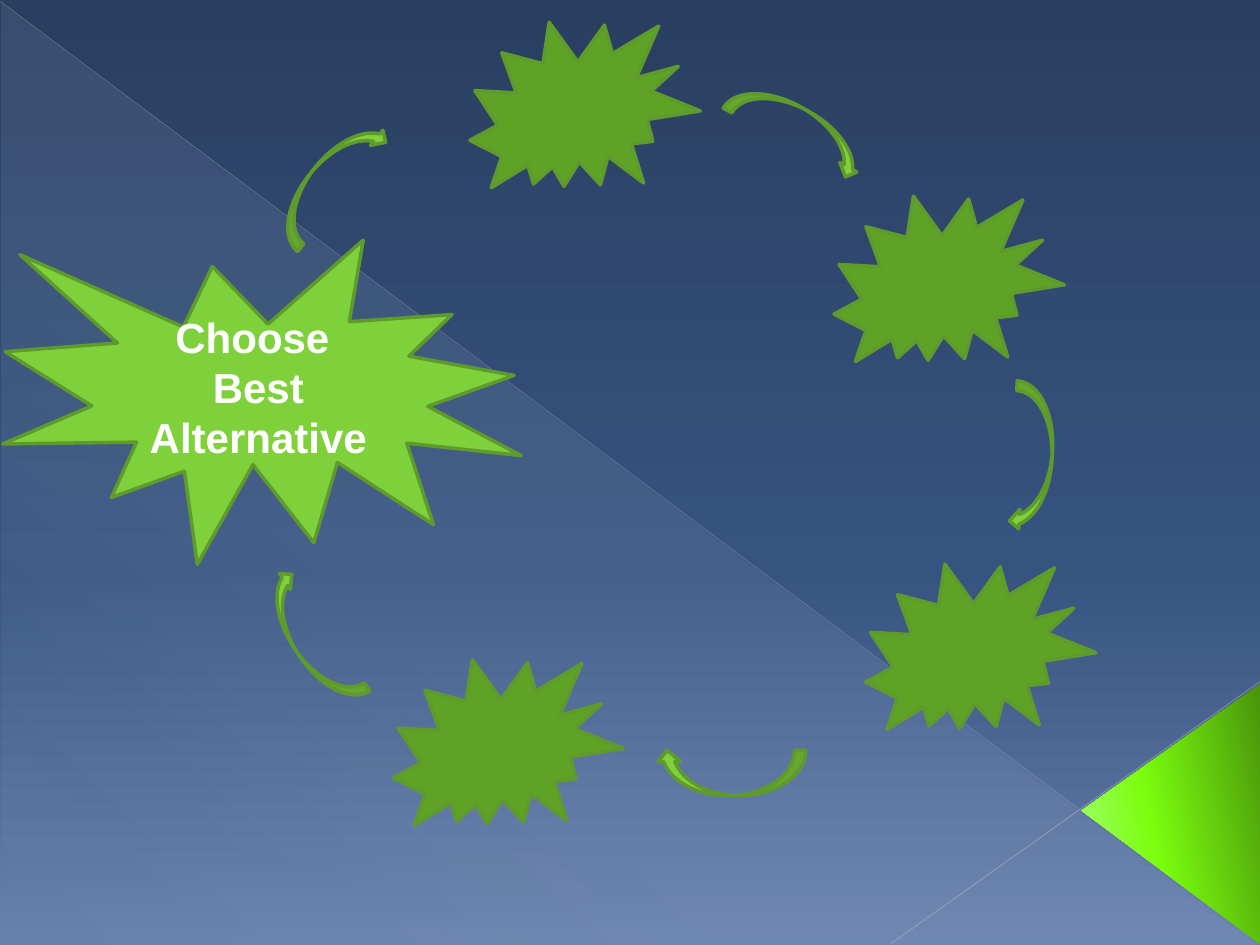
from dataclasses import dataclass

from lxml import etree
from pptx import Presentation
from pptx.dml.color import RGBColor
from pptx.enum.shapes import MSO_CONNECTOR, MSO_SHAPE as Preset
from pptx.enum.text import MSO_AUTO_SIZE as AutoSize, PP_ALIGN as Align
from pptx.oxml.ns import qn
from pptx.util import Inches, Pt


@dataclass(frozen=True)
class Theme:
    lime: str = "7FD13B"
    leaf: str = "5FA326"
    outline: str = "5E9B2C"
    white: str = "FFFFFF"
    font: str = "Arial"
    title_size: int = 24
    outline_width: int = 2
    # Gradient stops: position %, colour, opacity %
    sky: tuple = ((0, "293F60", 100), (60, "375380", 100), (100, "667FAC", 100))
    haze: tuple = ((0, "D6ECFF", 10), (70, "D6ECFF", 8), (100, "D6ECFF", 1))
    glow: tuple = ((0, "49940B", 100), (60, "7BFE0E", 100), (100, "A8FF7D", 100))


theme = Theme()


def paint_gradient(owner, fill, stops, angle):
    """Fill owner with a linear gradient; the angle runs clockwise in degrees."""
    fill.gradient()
    gradient = owner.element.find(".//" + qn("a:gradFill"))
    for child in list(gradient):
        gradient.remove(child)
    gradient.set("rotWithShape", "1")
    stop_list = etree.SubElement(gradient, qn("a:gsLst"))
    for position, color, opacity in stops:
        stop = etree.SubElement(stop_list, qn("a:gs"), pos=str(position * 1000))
        rgb = etree.SubElement(stop, qn("a:srgbClr"), val=color)
        etree.SubElement(rgb, qn("a:alpha"), val=str(opacity * 1000))
    etree.SubElement(gradient, qn("a:lin"), ang=str(angle * 60000), scaled="0")


def add_text(slide, lines, box, *, size, color, font, bold=False, align=Align.CENTER):
    frame = slide.shapes.add_textbox(*map(Inches, box)).text_frame
    frame.word_wrap = False
    frame.auto_size = AutoSize.SHAPE_TO_FIT_TEXT
    for index, line in enumerate(lines):
        paragraph = frame.add_paragraph() if index else frame.paragraphs[0]
        paragraph.alignment = align
        run = paragraph.add_run()
        run.text = line
        run.font.size = Pt(size)
        run.font.bold = bold
        run.font.name = font
        run.font.color.rgb = RGBColor.from_string(color)


presentation = Presentation()
presentation.slide_width, presentation.slide_height = Inches(10), Inches(7.5)
slide = presentation.slides.add_slide(presentation.slide_layouts[6])
paint_gradient(slide, slide.background.fill, theme.sky, 90)

# Backdrop: a hazy half, two hairlines and the glowing corner
facets = [
    (Preset.RIGHT_TRIANGLE, (0.01, 0.02, 9.98, 7.48), 0, theme.haze, 133),
    (Preset.ISOSCELES_TRIANGLE, (8.26, 5.75, 2.07, 1.42), 270, theme.glow, 258),
]
for preset, box, rotation, stops, angle in facets:
    facet = slide.shapes.add_shape(preset, *map(Inches, box))
    facet.rotation = rotation
    facet.shadow.inherit = False
    facet.line.fill.background()
    paint_gradient(facet, facet.fill, stops, angle)
corner = facet
corner.adjustments[0] = 0.513

hairlines = [
    ((0, 0.01, 9.99, 7.49), "B7BCC5", 0.39, 35),
    ((10, 5.41, 7.07, 7.49), "BFC3CB", 0.47, 45),
]
for ends, color, width, opacity in hairlines:
    hairline = slide.shapes.add_connector(MSO_CONNECTOR.STRAIGHT, *map(Inches, ends))
    hairline.line.width = Pt(width)
    hairline.line.color.rgb = RGBColor.from_string(color)
    rgb = hairline.element.spPr.find(".//" + qn("a:srgbClr"))
    etree.SubElement(rgb, qn("a:alpha"), val=str(opacity * 1000))
    etree.SubElement(hairline.element.spPr, qn("a:effectLst"))
slide.shapes.element.append(corner.element)  # the corner lies over the hairlines

# Cycle: the main burst, the arrows and the small bursts
arrows = [
    (6.18, 0.42, 0.31, 299.4),
    (2.46, 0.84, 0.31, 218.9),
    (2.32, 4.48, 0.31, 146.2),
    (5.62, 5.54, 0.36, 90),
    (8.04, 3.03, 0.31, 3.2),
]
small_bursts = [(3.77, 0.04), (6.66, 1.42), (6.91, 4.34), (3.16, 5.1)]
cycle = [(Preset.EXPLOSION1, (0.02, 1.86, 4.14, 2.65), 3.5, theme.lime)]
cycle += [
    (Preset.CURVED_LEFT_ARROW, (left, top, width, 1.19), rotation, theme.lime)
    for left, top, width, rotation in arrows
]
cycle += [
    (Preset.EXPLOSION2, (left, top, 1.73, 1.67), 20.7, theme.leaf)
    for left, top in small_bursts
]
for preset, box, rotation, color in cycle:
    shape = slide.shapes.add_shape(preset, *map(Inches, box))
    shape.rotation = rotation
    shape.shadow.inherit = False
    shape.fill.solid()
    shape.fill.fore_color.rgb = RGBColor.from_string(color)
    shape.line.color.rgb = RGBColor.from_string(theme.outline)
    shape.line.width = Pt(theme.outline_width)

add_text(
    slide,
    ["Choose ", "Best", "Alternative"],
    (1.08, 2.42, 1.94, 1.31),
    size=theme.title_size,
    color=theme.white,
    font=theme.font,
    bold=True,
)

presentation.save("out.pptx")
